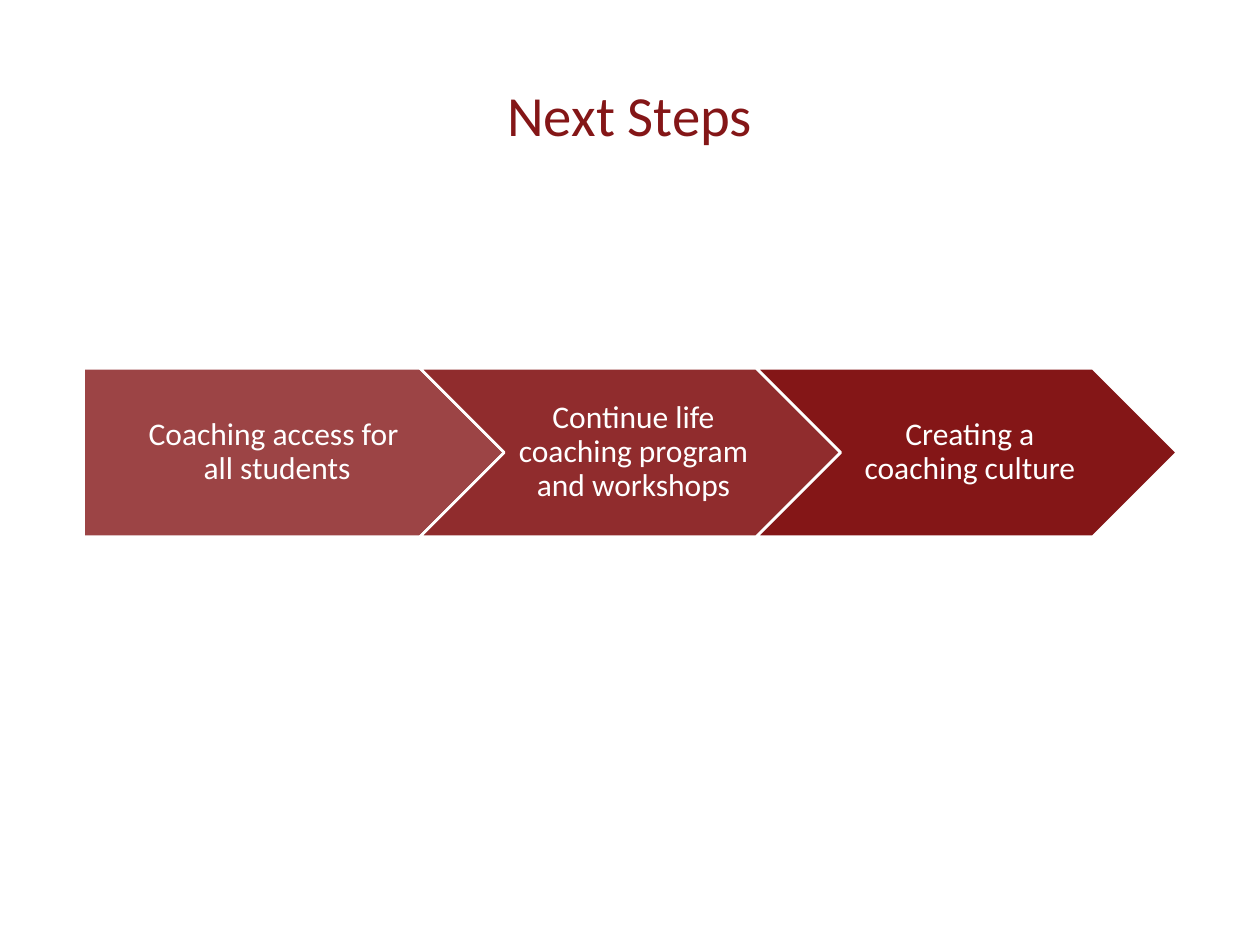
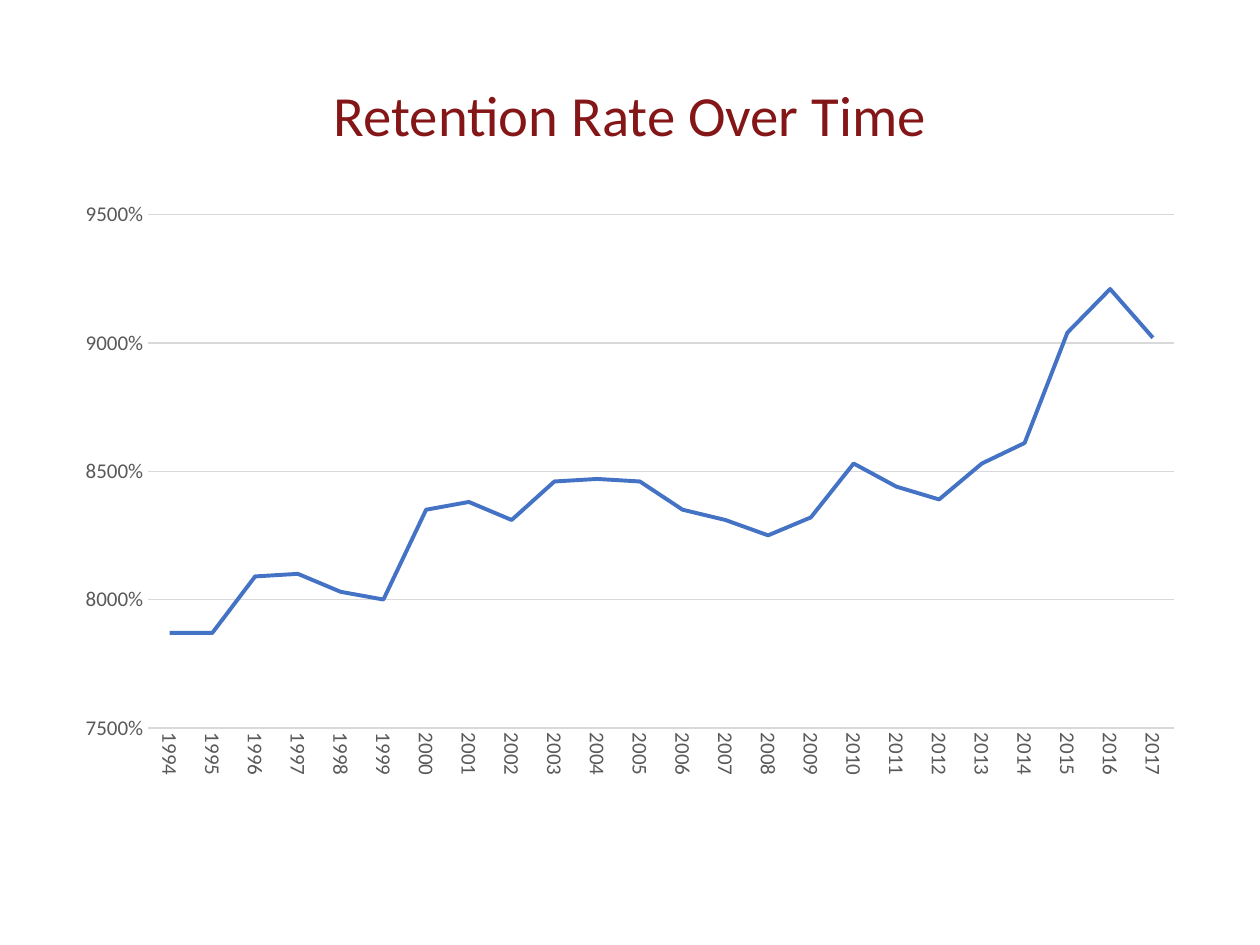
"""Build the next steps and retention rate slides."""

from lxml.etree import SubElement
from pptx import Presentation
from pptx.chart.data import CategoryChartData
from pptx.dml.color import RGBColor
from pptx.enum.chart import XL_CHART_TYPE, XL_TICK_MARK
from pptx.enum.shapes import MSO_SHAPE
from pptx.enum.text import MSO_ANCHOR, MSO_AUTO_SIZE, PP_ALIGN
from pptx.oxml.ns import qn
from pptx.util import Pt

STEPS_TITLE = "Next Steps"
STEPS = [
    ("Coaching access for \vall students", 80),
    ("Continue life coaching program and workshops", 90),
    ("Creating a coaching culture", 100),
]
RETENTION_TITLE = "Retention Rate Over Time"
FIRST_YEAR = 1994
RETENTION_RATES = [
    78.7, 78.7, 80.9, 81, 80.3, 80, 83.5, 83.8, 83.1, 84.6, 84.7, 84.6,
    83.5, 83.1, 82.5, 83.2, 85.3, 84.4, 83.9, 85.3, 86.1, 90.4, 92.1, 90.2,
]

FONT = "Calibri"
CRIMSON = RGBColor(0x84, 0x16, 0x17)
WHITE = RGBColor(0xFF, 0xFF, 0xFF)
BLACK = RGBColor(0x00, 0x00, 0x00)
LABEL_GRAY = RGBColor(0x59, 0x59, 0x59)
GRID_GRAY = RGBColor(0xD9, 0xD9, 0xD9)
LINE_BLUE = RGBColor(0x44, 0x72, 0xC4)

STEP_LEFT, STEP_TOP, STEP_WIDTH, STEP_HEIGHT = 47.8, 210.5, 240.3, 96.2
STEP_PITCH = STEP_WIDTH * 0.8


def style_font(font, size, color):
    font.name = FONT
    font.size = Pt(size)
    font.color.rgb = color


def style_line(line, color, width):
    line.color.rgb = color
    line.width = Pt(width)


def write_text(shape, text, *, size, color, margins=(7.2, 3.6, 7.2, 3.6)):
    frame = shape.text_frame
    frame.word_wrap = True
    frame.auto_size = MSO_AUTO_SIZE.NONE
    frame.vertical_anchor = MSO_ANCHOR.MIDDLE
    frame.margin_left, frame.margin_top, frame.margin_right, frame.margin_bottom = map(Pt, margins)
    paragraph = frame.paragraphs[0]
    paragraph.text = text
    paragraph.alignment = PP_ALIGN.CENTER
    paragraph.line_spacing = 0.9
    for run in paragraph.runs:
        style_font(run.font, size, color)


def add_titled_slide(presentation, title_text):
    slide = presentation.slides.add_slide(presentation.slide_layouts[5])
    title = slide.shapes.title
    title.left, title.top, title.width, title.height = Pt(47), Pt(45.2), Pt(625.8), Pt(44.8)
    write_text(title, title_text, size=32.4, color=CRIMSON)
    return slide


def add_step(group, index, text, opacity):
    preset = MSO_SHAPE.CHEVRON if index else MSO_SHAPE.PENTAGON
    shape = group.shapes.add_shape(
        preset, Pt(STEP_LEFT + index * STEP_PITCH), Pt(STEP_TOP), Pt(STEP_WIDTH), Pt(STEP_HEIGHT)
    )
    shape.shadow.inherit = False
    shape.fill.solid()
    shape.fill.fore_color.rgb = CRIMSON
    if opacity < 100:
        fill_color = shape.element.spPr.find(qn("a:solidFill")).find(qn("a:srgbClr"))
        SubElement(fill_color, qn("a:alpha")).set("val", str(opacity * 1000))
    style_line(shape.line, WHITE, 1.5)
    left_margin = 5.8 if index else 7.2
    write_text(shape, text, size=18, color=WHITE, margins=(left_margin, 3.6, 2.2, 3.6))


def add_retention_chart(slide):
    data = CategoryChartData()
    data.categories = [str(FIRST_YEAR + index) for index in range(len(RETENTION_RATES))]
    data.add_series("Series 1", RETENTION_RATES)
    chart = slide.shapes.add_chart(
        XL_CHART_TYPE.LINE, Pt(36), Pt(108.7), Pt(648), Pt(341.3), data
    ).chart
    chart.has_legend = False
    chart.has_title = False
    style_font(chart.font, 10, BLACK)

    plot = chart.plots[0]
    plot.vary_by_categories = False
    series = plot.series[0]
    series.smooth = False
    style_line(series.format.line, LINE_BLUE, 2.25)

    years, rates = chart.category_axis, chart.value_axis
    for axis in (years, rates):
        axis.major_tick_mark = axis.minor_tick_mark = XL_TICK_MARK.NONE
        style_font(axis.tick_labels.font, 12, LABEL_GRAY)
    style_line(years.format.line, GRID_GRAY, 0.75)
    label_body = years.tick_labels.font._element.getparent().getparent().getparent().find(qn("a:bodyPr"))
    label_body.set("rot", "5400000")
    label_body.set("vert", "horz")

    rates.minimum_scale, rates.maximum_scale, rates.major_unit = 75, 95, 5
    rates.tick_labels.number_format = "0%"
    rates.tick_labels.number_format_is_linked = False
    rates.format.line.fill.background()
    rates.has_major_gridlines = True
    style_line(rates.major_gridlines.format.line, GRID_GRAY, 0.75)


def main():
    presentation = Presentation()
    presentation.slide_width, presentation.slide_height = Pt(720), Pt(540)
    steps_slide = add_titled_slide(presentation, STEPS_TITLE)
    group = steps_slide.shapes.add_group_shape()
    for index, (text, opacity) in enumerate(STEPS):
        add_step(group, index, text, opacity)
    add_retention_chart(add_titled_slide(presentation, RETENTION_TITLE))
    presentation.save("out.pptx")


if __name__ == "__main__":
    main()
